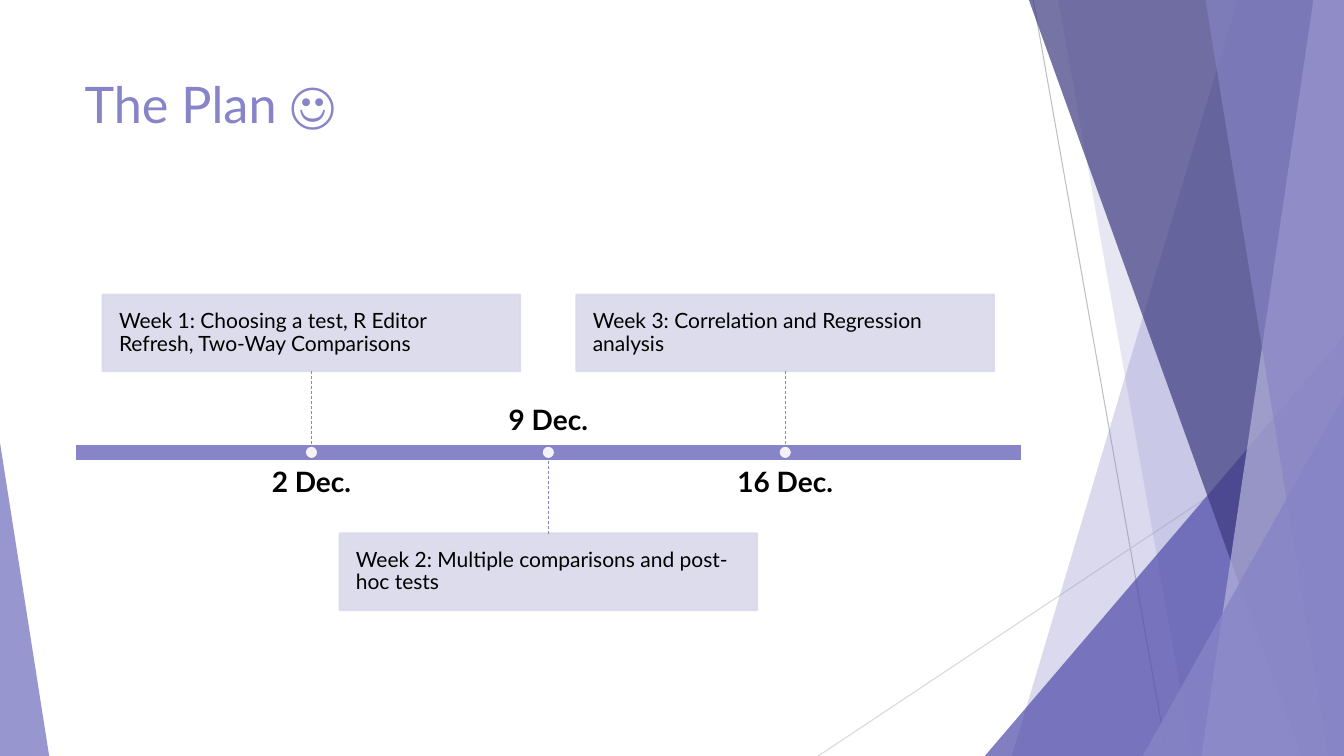
from lxml import etree
from pptx import Presentation
from pptx.dml.color import RGBColor
from pptx.enum.dml import MSO_LINE
from pptx.enum.shapes import MSO_CONNECTOR, MSO_SHAPE
from pptx.enum.text import MSO_ANCHOR, MSO_AUTO_SIZE, PP_ALIGN
from pptx.oxml.ns import qn
from pptx.util import Cm, Pt

LEFT, CENTER = PP_ALIGN.LEFT, PP_ALIGN.CENTER
TOP, MIDDLE, BOTTOM = MSO_ANCHOR.TOP, MSO_ANCHOR.MIDDLE, MSO_ANCHOR.BOTTOM
RECT, OVAL, TRI = MSO_SHAPE.RECTANGLE, MSO_SHAPE.OVAL, MSO_SHAPE.ISOSCELES_TRIANGLE
STRAIGHT, DASH = MSO_CONNECTOR.STRAIGHT, MSO_LINE.DASH

FONT = "Lato"
HUES = {
    "main": "8784C7", "deep": "514DAA", "dark": "3D3A7F", "pale": "B7B5DD",
    "card": "D9D9EB", "white": "FFFFFF", "black": "000000",
    "gray": "BFBFBF", "mist": "D9D9D9",
}
TITLE = "The Plan ☺"
WEEKS = [
    ("2 Dec.", "Week 1: Choosing a test, R Editor Refresh, Two-Way Comparisons"),
    ("9 Dec.", "Week 2: Multiple comparisons and post-hoc tests"),
    ("16 Dec.", "Week 3: Correlation and Regression analysis"),
]

WIDE, HIGH = 33.87, 19.05
RAYS = [
    (26.04, 0, 29.41, HIGH, "gray"),
    (WIDE, 10.24, 20.62, HIGH, "mist"),
]
FACETS = [
    ("band", 31.19, 25.5, "main", 30),
    ("band", 26.67, 30.05, "main", 20),
    ("peak", 24.82, 8.46, WIDE - 24.82, 1, "deep", 72),
    ("band", 25.93, 32.79, "dark", 70),
    ("band", 33.1, 30.28, "pale", 70),
    ("band", 30.38, 33.48, "main", 65),
    ("peak", 28.8, 9.98, WIDE - 28.8, 1, "main", 80),
    ("peak", 0, 11.15, 1.24, 0, "main", 85),
]
EDGE, SPAN, AXIS, THICK = 1.88, 23.88, 11.4, 0.43
STEP = SPAN / 4
CARD_W, CARD_H, CARD_GAP = 10.52, 1.93, 3.01
DATE_W, DATE_H, DATE_GAP = 9.55, 1.22, 1.01
DOT = 0.28


def rgb(name):
    return RGBColor.from_string(HUES[name])


def fade(fill, alpha):
    for hue in fill._xPr.iter(qn("a:srgbClr")):
        etree.SubElement(hue, qn("a:alpha")).set("val", str(alpha * 1000))


def paint(shape, hue, alpha=100, edge=None):
    shape.shadow.inherit = False
    shape.fill.solid()
    shape.fill.fore_color.rgb = rgb(hue)
    if edge:
        shape.line.color.rgb = rgb(edge)
        shape.line.width = Pt(1.5)
    else:
        shape.line.fill.background()
    if alpha < 100:
        fade(shape.fill, alpha)


def write(shape, text, size=15, hue="black", bold=False, align=LEFT,
          anchor=MIDDLE, pad=(0, 0), pitch=0.9):
    frame = shape.text_frame
    frame.word_wrap = True
    frame.auto_size = MSO_AUTO_SIZE.NONE
    frame.vertical_anchor = anchor
    frame.margin_left = frame.margin_right = Cm(pad[0])
    frame.margin_top = frame.margin_bottom = Cm(pad[1])
    para = frame.paragraphs[0]
    para.alignment = align
    para.line_spacing = pitch
    run = para.add_run()
    run.text = text
    run.font.name = FONT
    run.font.size = Pt(size)
    run.font.bold = bold
    run.font.color.rgb = rgb(hue)


def block(kind, x, y, w, h):
    return shapes.add_shape(kind, Cm(x), Cm(y), Cm(w), Cm(h))


def rule(x1, y1, x2, y2, hue, width, dash=None):
    line = shapes.add_connector(STRAIGHT, Cm(x1), Cm(y1), Cm(x2), Cm(y2))
    line.line.color.rgb = rgb(hue)
    line.line.width = Pt(width)
    if dash:
        line.line.dash_style = dash
    etree.SubElement(line._element.spPr, qn("a:effectLst"))


def band(top, foot, hue, alpha):
    pen = shapes.build_freeform(Cm(top), 0)
    pen.add_line_segments(
        [(Cm(WIDE), 0), (Cm(WIDE), Cm(HIGH)), (Cm(foot), Cm(HIGH))], close=True)
    paint(pen.convert_to_shape(), hue, alpha)


def peak(x, y, w, tip, hue, alpha):
    shape = block(TRI, x, y, w, HIGH - y)
    shape.adjustments[0] = tip
    paint(shape, hue, alpha)


def decor():
    for x1, y1, x2, y2, hue in RAYS:
        rule(x1, y1, x2, y2, hue, 0.75)
    for kind, *args in FACETS:
        (band if kind == "band" else peak)(*args)


def week(spot, date, topic):
    x = EDGE + STEP * (spot + 1)
    side = 1 if spot % 2 else -1
    mid = AXIS + side * CARD_GAP
    card = block(RECT, x - CARD_W / 2, mid - CARD_H / 2, CARD_W, CARD_H)
    paint(card, "card", 90, "card")
    write(card, topic, pad=(0.41, 0.41))
    rule(x, AXIS + side * THICK / 2, x, mid - side * CARD_H / 2, "main", 0.5, DASH)
    paint(block(OVAL, x - DOT / 2, AXIS - DOT / 2, DOT, DOT), "white", 90)
    label = shapes.add_textbox(
        Cm(x - DATE_W / 2), Cm(AXIS - side * DATE_GAP - DATE_H / 2),
        Cm(DATE_W), Cm(DATE_H))
    write(label, date, size=20, bold=True, align=CENTER,
          anchor=BOTTOM if side > 0 else TOP)


deck = Presentation()
deck.slide_width, deck.slide_height = Cm(WIDE), Cm(HIGH)
shapes = deck.slides.add_slide(deck.slide_layouts[5]).shapes
decor()
head = shapes.title
head.left, head.top, head.width, head.height = Cm(EDGE), Cm(1.7), Cm(SPAN), Cm(3.66)
write(head, TITLE, size=36, hue="main", anchor=TOP, pad=(0.25, 0.13), pitch=1.0)
paint(block(RECT, EDGE, AXIS - THICK / 2, SPAN, THICK), "main", edge="white")
for spot, (date, topic) in enumerate(WEEKS):
    week(spot, date, topic)
deck.save("out.pptx")
